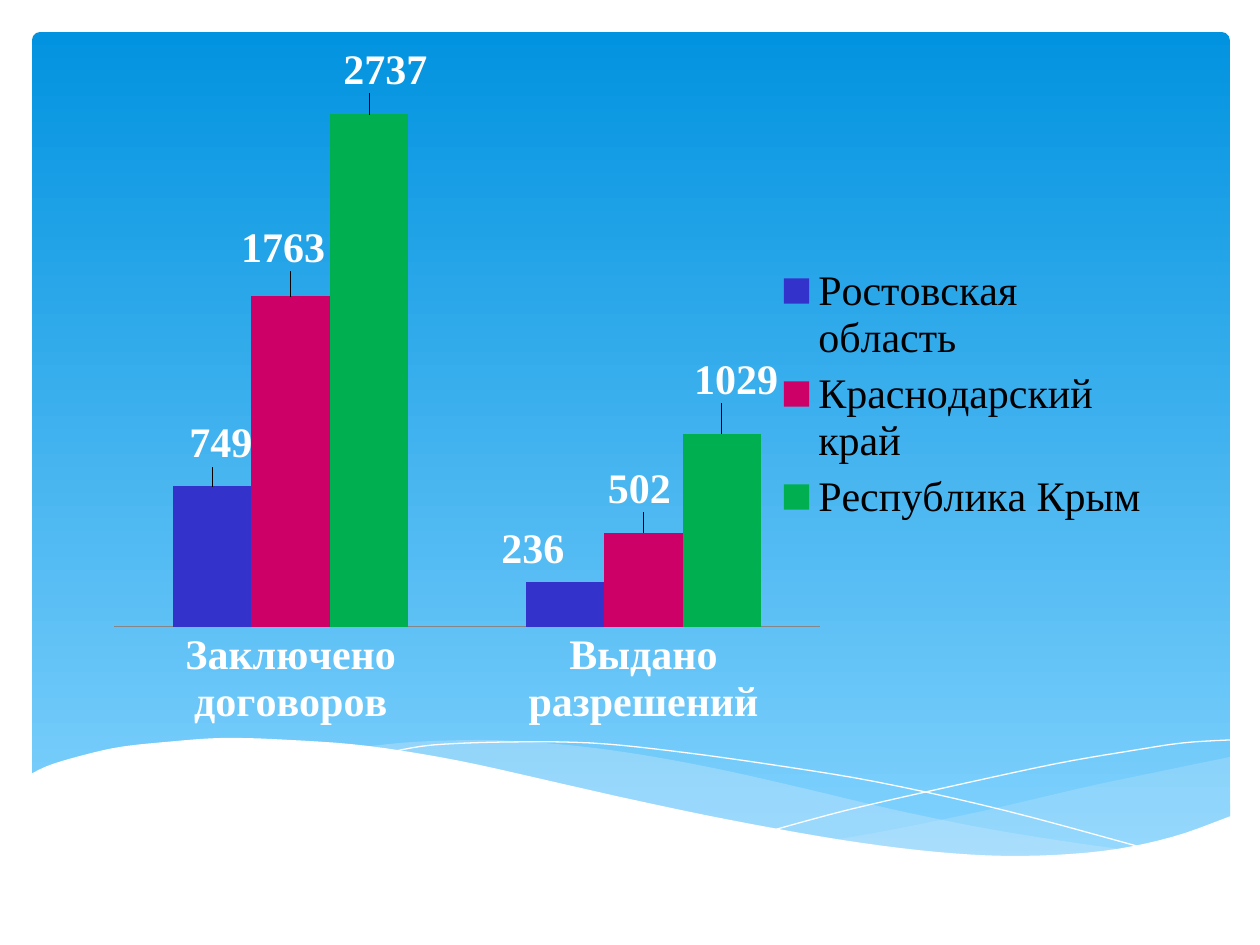
from pptx import Presentation
from pptx.chart.data import CategoryChartData
from pptx.dml.color import RGBColor
from pptx.enum.chart import XL_CHART_TYPE, XL_LABEL_POSITION, XL_LEGEND_POSITION, XL_TICK_MARK
from pptx.enum.shapes import MSO_SHAPE
from pptx.oxml import parse_xml
from pptx.oxml.ns import nsdecls, qn
from pptx.util import Emu, Pt

COLUMNS = XL_CHART_TYPE.COLUMN_CLUSTERED
OUTSIDE_END = XL_LABEL_POSITION.OUTSIDE_END
LEGEND_RIGHT = XL_LEGEND_POSITION.RIGHT
NO_TICKS = XL_TICK_MARK.NONE
ROUNDED = MSO_SHAPE.ROUNDED_RECTANGLE

WHITE = RGBColor(0xFF, 0xFF, 0xFF)
BLACK = RGBColor(0x00, 0x00, 0x00)
GRAY = RGBColor(0x86, 0x86, 0x86)
SKY_TOP = RGBColor(0x02, 0x93, 0xE0)
SKY_BOTTOM = RGBColor(0x83, 0xD3, 0xFE)
PALE_BLUE = RGBColor(0xC6, 0xE7, 0xFC)
BLUE = RGBColor(0x33, 0x33, 0xCC)
CRIMSON = RGBColor(0xCC, 0x00, 0x66)
GREEN = RGBColor(0x00, 0xB0, 0x50)

FONT = "Times New Roman"
EMU_PER_PX = 914400 / 126
CHART_BOX = (84, 37, 1081, 714)
PLOT_LAYOUT = {"x": 0.028, "y": 0.039, "w": 0.653, "h": 0.787}

CATEGORIES = ["Заключено договоров", "Выдано разрешений"]
# name, colour, values, label shifts in px
REGIONS = [
    ("Ростовская область", BLUE, (749, 236), ((9, -14), (-32, -4))),
    ("Краснодарский край", CRIMSON, (1763, 502), ((-8, -20), (-4, -15))),
    ("Республика Крым", GREEN, (2737, 1029), ((16, -16), (14, -25))),
]

RIGHT_CREST = [(1230, 757), (1143, 775), (1086, 787), (983, 811), (891, 830), (834, 840)]
RIGHT_TROUGH = [(834, 840), (889, 848), (955, 854), (1027, 857), (1089, 853),
                (1142, 845), (1189, 833), (1231, 818)]
MIDDLE_CREST = [(1126, 850), (1056, 840), (978, 827), (891, 809), (794, 786), (718, 769),
                (649, 756), (586, 747), (529, 742), (479, 740), (413, 742), (362, 747)]
MIDDLE_TROUGH = [(362, 747), (432, 757), (510, 772), (567, 786), (668, 809), (758, 828),
                 (839, 842), (911, 852), (975, 856), (1045, 857), (1094, 855), (1126, 850)]
FALLING_LINE = [(391, 752), (433, 745), (507, 742), (591, 743), (672, 751), (767, 764),
                (877, 782), (1003, 810), (1144, 848)]
RISING_LINE = [(774, 830), (848, 810), (944, 788), (1055, 764), (1130, 751),
               (1183, 743), (1230, 740)]
WHITE_CREST = [(1231, 816), (1172, 837), (1103, 851), (1019, 856), (937, 852), (842, 840),
               (730, 820), (634, 800), (563, 784), (460, 761), (368, 746), (290, 740),
               (223, 738), (166, 742), (120, 747), (84, 755), (50, 765), (29, 775)]
WHITE_BASE = [(29, 921), (1231, 921)]


def px(length):
    return Emu(round(length * EMU_PER_PX))


def smooth(points, steps=5):
    """Return points along a Catmull-Rom curve through the given points."""
    padded = [points[0], *points, points[-1]]
    curve = []
    for a, b, c, d in zip(padded, padded[1:], padded[2:], padded[3:]):
        for step in range(steps):
            t = step / steps
            curve.append(tuple(
                (2 * q + (r - p) * t + (2 * p - 5 * q + 4 * r - s) * t ** 2
                 + (3 * q - p - 3 * r + s) * t ** 3) / 2
                for p, q, r, s in zip(a, b, c, d)))
    return curve + [points[-1]]


def add_outline(slide, points, close):
    start, *rest = [(px(x), px(y)) for x, y in points]
    builder = slide.shapes.build_freeform(*start)
    builder.add_line_segments(rest, close=close)
    shape = builder.convert_to_shape()
    shape.shadow.inherit = False
    return shape


def add_wave(slide, points, color, opacity=100):
    shape = add_outline(slide, points, close=True)
    shape.fill.solid()
    shape.fill.fore_color.rgb = color
    shape.line.fill.background()
    if opacity < 100:
        color_element = shape.fill._xPr.find(".//" + qn("a:srgbClr"))
        color_element.append(parse_xml(f'<a:alpha {nsdecls("a")} val="{opacity * 1000}"/>'))


def add_wave_line(slide, points):
    shape = add_outline(slide, smooth(points), close=False)
    shape.fill.background()
    shape.line.color.rgb = WHITE
    shape.line.width = Pt(0)


def add_sky(slide):
    sky = slide.shapes.add_shape(ROUNDED, px(32), px(32), px(1198), px(832))
    sky.adjustments[0] = 0.01
    sky.shadow.inherit = False
    sky.line.fill.background()
    sky.fill.gradient()
    sky.fill.gradient_angle = 270
    for stop, color in zip(sky.fill.gradient_stops, (SKY_TOP, SKY_BOTTOM)):
        stop.color.rgb = color


def format_font(font, color, bold):
    font.name = FONT
    font.size = Pt(24)
    font.bold = bold
    font.color.rgb = color


def manual_layout(values, target=""):
    items = "".join(f'<c:{key} val="{value:.3f}"/>' for key, value in values.items())
    return parse_xml(f'<c:layout {nsdecls("c")}><c:manualLayout>{target}{items}'
                     '</c:manualLayout></c:layout>')


def place_plot(chart):
    plot_area = chart._chartSpace.find(".//" + qn("c:plotArea"))
    for layout in plot_area.findall(qn("c:layout")):
        plot_area.remove(layout)
    target = '<c:layoutTarget val="inner"/><c:xMode val="edge"/><c:yMode val="edge"/>'
    plot_area.insert(0, manual_layout(PLOT_LAYOUT, target))


def format_series(series, color, shifts):
    series.format.fill.solid()
    series.format.fill.fore_color.rgb = color
    series.data_labels.show_value = True
    format_font(series.data_labels.font, WHITE, True)
    for index in range(len(shifts)):
        label = series.points[index].data_label
        format_font(label.font, WHITE, True)
        label.position = OUTSIDE_END
    _, _, width, height = CHART_BOX
    labels = series._element.findall(".//" + qn("c:dLbl"))
    for label, (x, y) in zip(labels, shifts):
        label.find(qn("c:idx")).addnext(manual_layout({"x": x / width, "y": y / height}))


def add_region_chart(slide):
    data = CategoryChartData()
    data.categories = CATEGORIES
    for name, _, values, _ in REGIONS:
        data.add_series(name, values)
    chart = slide.shapes.add_chart(COLUMNS, *map(px, CHART_BOX), data).chart
    chart.has_title = False
    format_font(chart.font, BLACK, False)
    chart.has_legend = True
    chart.legend.position = LEGEND_RIGHT
    chart.legend.include_in_layout = False
    format_font(chart.legend.font, BLACK, False)

    category_axis = chart.category_axis
    category_axis.major_tick_mark = NO_TICKS
    category_axis.format.line.color.rgb = GRAY
    format_font(category_axis.tick_labels.font, WHITE, True)
    value_axis = chart.value_axis
    value_axis.minimum_scale = 0
    value_axis.maximum_scale = 3000
    value_axis.has_major_gridlines = False
    value_axis.visible = False

    plot = chart.plots[0]
    plot.gap_width = 150
    plot.overlap = 0
    plot.vary_by_categories = False
    for series, (_, color, _, shifts) in zip(plot.series, REGIONS):
        format_series(series, color, shifts)
    place_plot(chart)


def main():
    presentation = Presentation()
    presentation.slide_width = px(1260)
    presentation.slide_height = px(945)
    slide = presentation.slides.add_slide(presentation.slide_layouts[6])
    add_sky(slide)
    add_wave(slide, smooth(RIGHT_CREST) + smooth(RIGHT_TROUGH), PALE_BLUE, 29)
    add_wave(slide, smooth(MIDDLE_CREST) + smooth(MIDDLE_TROUGH), PALE_BLUE, 40)
    add_wave_line(slide, FALLING_LINE)
    add_wave_line(slide, RISING_LINE)
    add_wave(slide, smooth(WHITE_CREST) + WHITE_BASE, WHITE)
    add_region_chart(slide)
    presentation.save("out.pptx")


if __name__ == "__main__":
    main()
